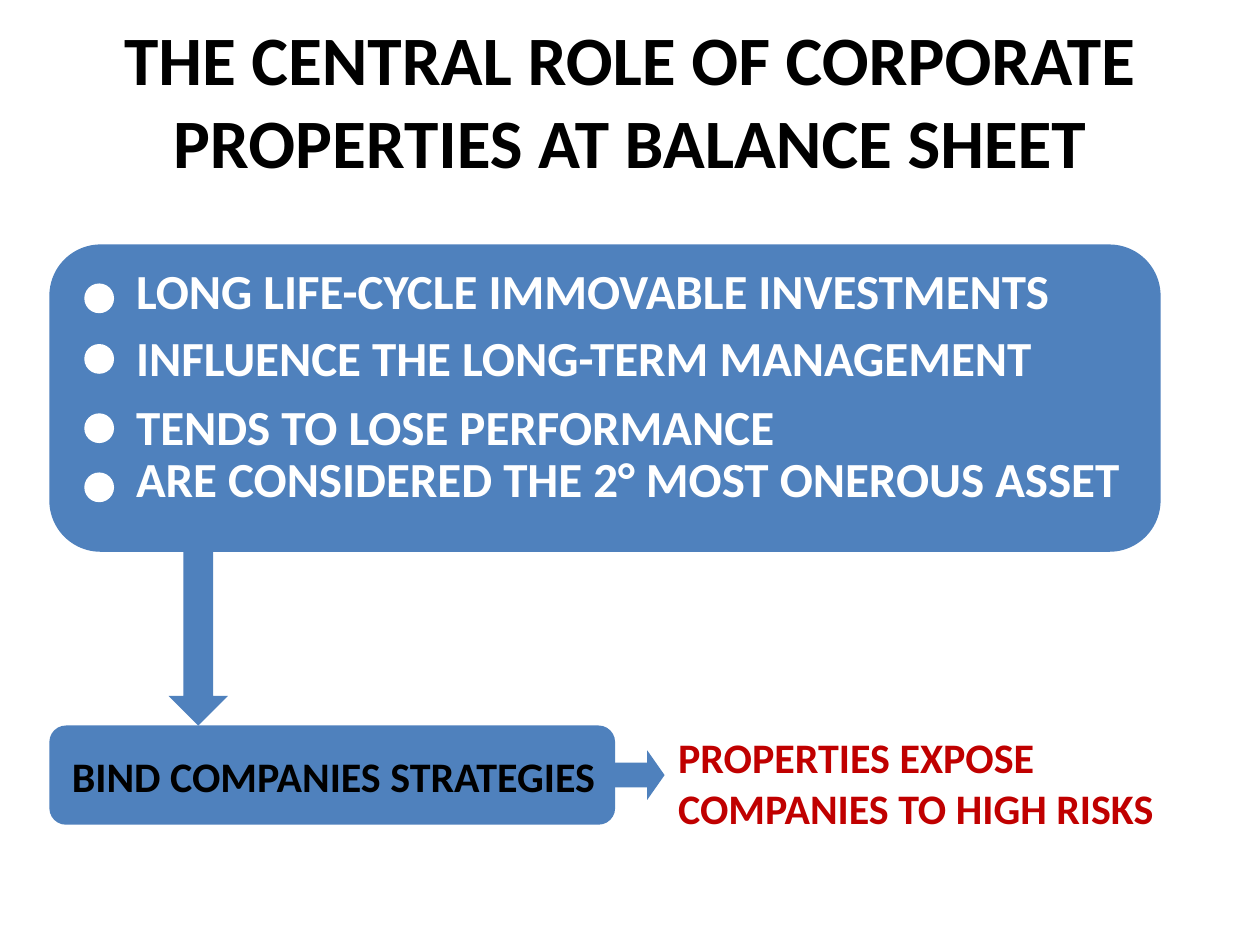
from pptx import Presentation
from pptx.dml.color import RGBColor
from pptx.enum.shapes import MSO_SHAPE
from pptx.enum.text import MSO_ANCHOR, PP_ALIGN
from pptx.util import Pt

BLUE = RGBColor(0x4F, 0x81, 0xBD)
WHITE = RGBColor(0xFF, 0xFF, 0xFF)
BLACK = RGBColor(0, 0, 0)
RED = RGBColor(0xC0, 0, 0)

# Each point: text, bullet offset and text offset from the panel top
POINTS = [
    ("LONG LIFE-CYCLE IMMOVABLE INVESTMENTS", 22.3, 5.8),
    ("INFLUENCE THE LONG-TERM MANAGEMENT", 56.9, 43.9),
    ("TENDS TO LOSE PERFORMANCE", 96.5, 83.5),
    ("ARE CONSIDERED THE 2° MOST ONEROUS ASSET", 130.3, 113),
]


def add_block(s, kind, x, y, w, h, color=BLUE):
    sp = s.shapes.add_shape(kind, Pt(x), Pt(y), Pt(w), Pt(h))
    sp.shadow.inherit = False
    sp.fill.solid()
    sp.fill.fore_color.rgb = color
    sp.line.fill.background()
    return sp


def add_text(s, text, x, y, w, h, size=24, color=BLACK,
             align=PP_ALIGN.LEFT, anchor=MSO_ANCHOR.TOP):
    tf = s.shapes.add_textbox(Pt(x), Pt(y), Pt(w), Pt(h)).text_frame
    tf.word_wrap = True
    tf.vertical_anchor = anchor
    p = tf.paragraphs[0]
    p.alignment = align
    r = p.add_run()
    r.text = text
    r.font.name = "Calibri"
    r.font.size = Pt(size)
    r.font.bold = True
    r.font.color.rgb = color


def add_title(s, x, y, w, h):
    add_text(s, "THE CENTRAL ROLE OF CORPORATE PROPERTIES AT BALANCE SHEET",
             x, y, w, h, size=39.6, align=PP_ALIGN.CENTER,
             anchor=MSO_ANCHOR.MIDDLE)


def add_points_panel(s, x, y, w, h):
    add_block(s, MSO_SHAPE.ROUNDED_RECTANGLE, x, y, w, h)
    for text, dot_dy, text_dy in POINTS:
        add_block(s, MSO_SHAPE.OVAL, x + 20, y + dot_dy, 17, 17, WHITE)
        add_text(s, text, x + 42.5, y + text_dy, 595, 41, size=28, color=WHITE)


def add_consequence(s, x, y, w, h):
    """Strategy box with an arrow to the risk statement on its right."""
    box_w, arrow = 323.3, 28.3
    add_block(s, MSO_SHAPE.ROUNDED_RECTANGLE, x, y, box_w, h)
    add_text(s, "BIND COMPANIES STRATEGIES", x + 5.8, y + 10.8, 329, 36)
    sp = add_block(s, MSO_SHAPE.RIGHT_ARROW, x + box_w, y + (h - arrow) / 2,
                   arrow, arrow)
    sp.adjustments[1] = 0.35
    text_dx = box_w + arrow + 0.6
    add_text(s, "PROPERTIES EXPOSE COMPANIES TO HIGH RISKS",
             x + text_dx, y, w - text_dx, 65.5, color=RED)


def main():
    prs = Presentation()
    prs.slide_width, prs.slide_height = Pt(720), Pt(540)
    s = prs.slides.add_slide(prs.slide_layouts[6])
    left, panel_y, panel_h, lower_y = 28.2, 139.7, 175.6, 414.6
    panel_bottom = panel_y + panel_h
    add_title(s, 36, 11.5, 648, 90)
    add_consequence(s, left, lower_y, 695, 56.7)
    add_block(s, MSO_SHAPE.DOWN_ARROW, 96.3, panel_bottom,
              34, lower_y - panel_bottom)
    add_points_panel(s, left, panel_y, 635, panel_h)
    prs.save("out.pptx")


if __name__ == "__main__":
    main()
